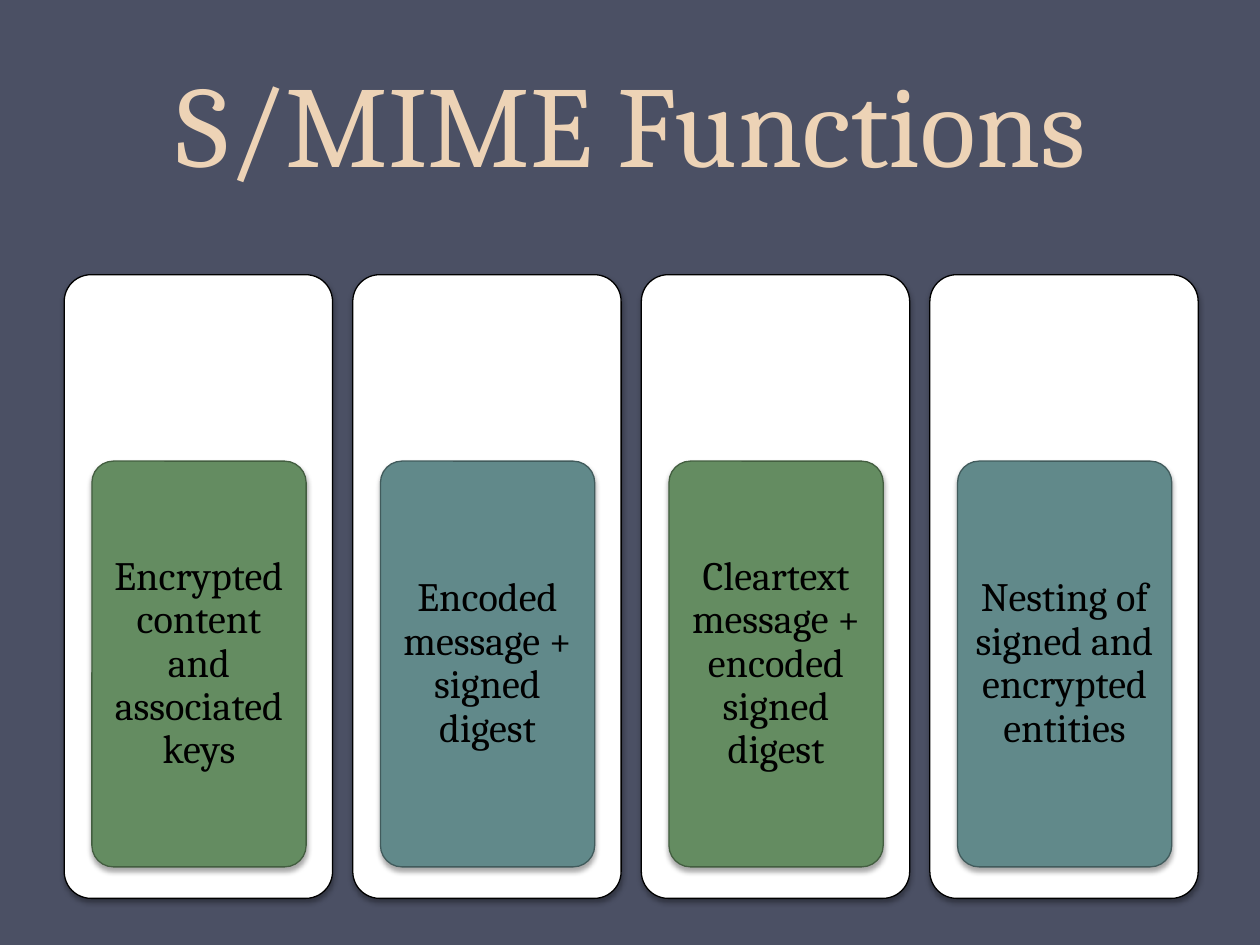
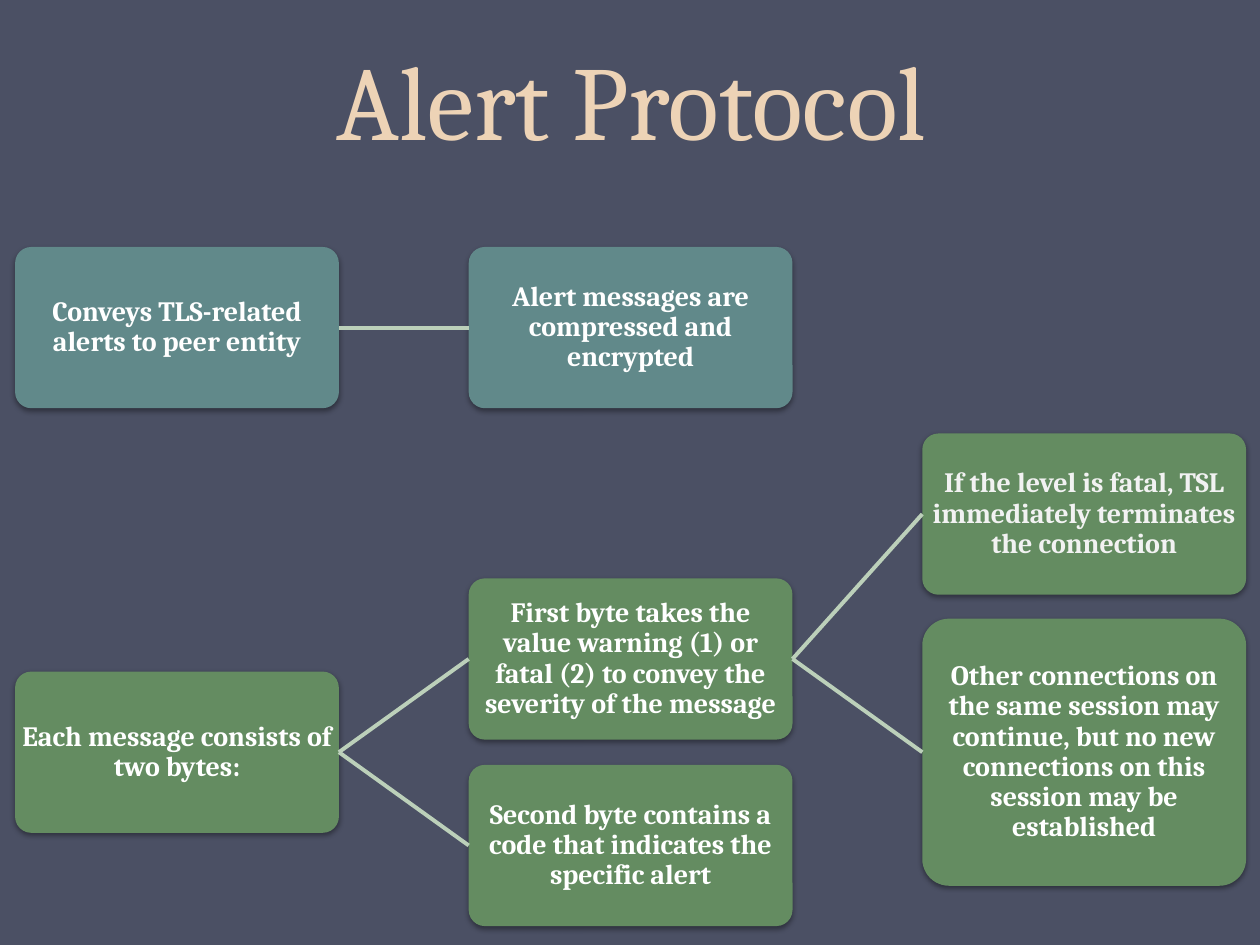
from lxml import etree
from pptx import Presentation
from pptx.dml.color import RGBColor
from pptx.enum.shapes import MSO_CONNECTOR, MSO_SHAPE
from pptx.enum.text import MSO_ANCHOR, PP_ALIGN
from pptx.oxml.ns import qn
from pptx.util import Inches, Pt

NAVY = RGBColor(0x4B, 0x50, 0x64)
SAND = RGBColor(0xED, 0xD3, 0xB6)
GREEN = RGBColor(0x64, 0x8C, 0x61)
MOSS = RGBColor(0x43, 0x5E, 0x40)
TEAL = RGBColor(0x61, 0x89, 0x8A)
PINE = RGBColor(0x41, 0x5B, 0x5C)
SAGE = RGBColor(0xBC, 0xD0, 0xBA)
WHITE = RGBColor(0xFF, 0xFF, 0xFF)
PALE = RGBColor(0xF2, 0xF2, 0xF2)
BLACK = RGBColor(0, 0, 0)
FONT = "Cambria"
ROUND = MSO_SHAPE.ROUNDED_RECTANGLE
LINE = MSO_CONNECTOR.STRAIGHT
CENTER = PP_ALIGN.CENTER
MIDDLE, BOTTOM = MSO_ANCHOR.MIDDLE, MSO_ANCHOR.BOTTOM
RIGHT, LEFT = 3, 1


def write(shape, text, size, color, bold=False, anchor=MIDDLE, pitch=0.9, pads=(0.1, 0.05)):
    frame = shape.text_frame
    frame.word_wrap = True
    frame.vertical_anchor = anchor
    frame.margin_left = frame.margin_right = Inches(pads[0])
    frame.margin_top = frame.margin_bottom = Inches(pads[1])
    para = frame.paragraphs[0]
    para.alignment = CENTER
    para.line_spacing = pitch
    run = para.add_run()
    run.text = text
    font = run.font
    font.name, font.size, font.bold = FONT, Pt(size), bold
    font.color.rgb = color


class Deck:
    """Holds the shared style and the current slide."""

    def __init__(self):
        self.file = Presentation()
        self.file.slide_width = Inches(10)
        self.file.slide_height = Inches(7.5)
        self.slide = None

    def start(self, title, top, size):
        self.slide = self.file.slides.add_slide(self.file.slide_layouts[6])
        fill = self.slide.background.fill
        fill.solid()
        fill.fore_color.rgb = NAVY
        box = self.slide.shapes.add_textbox(Inches(0.51), Inches(top), Inches(9), Inches(1.75))
        write(box, title, size, SAND, anchor=BOTTOM, pitch=Pt(58))

    def box(self, left, top, width, height, color, edge=None, dark=35, drop=1.8):
        shape = self.slide.shapes.add_shape(
            ROUND, Inches(left), Inches(top), Inches(width), Inches(height))
        shape.adjustments[0] = 0.1
        shape.fill.solid()
        shape.fill.fore_color.rgb = color
        if edge is None:
            shape.line.fill.background()
        else:
            shape.line.color.rgb = edge
            shape.line.width = Pt(0.75)
        self.shade(shape, dark, drop)
        return shape

    def shade(self, shape, dark, drop):
        shape.shadow.inherit = False
        group = shape._element.spPr.find(qn("a:effectLst"))
        cast = etree.SubElement(
            group, qn("a:outerShdw"), blurRad=str(Pt(3.1)), dist=str(Pt(drop)),
            dir="5400000", rotWithShape="0")
        tint = etree.SubElement(cast, qn("a:srgbClr"), val=str(BLACK))
        etree.SubElement(tint, qn("a:alpha"), val=str(dark * 1000))

    def join(self, first, last):
        link = self.slide.shapes.add_connector(LINE, 0, 0, 0, 0)
        link.begin_connect(first, RIGHT)
        link.end_connect(last, LEFT)
        link.line.color.rgb = SAGE
        link.line.width = Pt(2.25)
        etree.SubElement(link._element.spPr, qn("a:effectLst"))

    def card(self, left, text, color, edge):
        self.box(left, 2.18, 2.13, 4.95, WHITE, BLACK)
        inner = self.box(left + 0.22, 3.66, 1.7, 3.22, color, edge)
        write(inner, text, 23, BLACK, pads=(0.06, 0.05))

    def node(self, col, top, text, color=GREEN, height=1.28, ink=WHITE, source=None):
        shape = self.box(0.12 + 3.6 * col, top, 2.57, height, color, dark=38, drop=1.6)
        write(shape, text, 16, ink, bold=True, pads=(0.01, 0.01))
        if source is not None:
            self.join(source, shape)
        return shape


def functions(deck):
    deck.start("S/MIME Functions", -0.19, 66)
    tones = ((GREEN, MOSS), (TEAL, PINE))
    cards = (
        "Encrypted content and associated keys",
        "Encoded message + signed digest",
        "Cleartext message + encoded signed digest",
        "Nesting of signed and encrypted entities",
    )
    for i, text in enumerate(cards):
        deck.card(0.51 + 2.29 * i, text, *tones[i % 2])


def alerts(deck):
    deck.start("Alert Protocol", -0.42, 60)
    alert = deck.node(0, 1.96, "Conveys TLS-related alerts to peer entity", TEAL)
    deck.node(1, 1.96, "Alert messages are compressed and encrypted", TEAL, source=alert)
    bytes_ = deck.node(0, 5.33, "Each message consists of two bytes:")
    level = deck.node(
        1, 4.59, "First byte takes the value warning (1) or fatal (2) "
        "to convey the severity of the message", source=bytes_)
    deck.node(
        2, 3.44, "If the level is fatal, TSL immediately terminates the connection",
        ink=PALE, source=level)
    deck.node(
        2, 4.91, "Other connections on the same session may continue, but no new "
        "connections on this session may be established", height=2.12, source=level)
    deck.node(
        1, 6.07, "Second byte contains a code that indicates the specific alert",
        source=bytes_)


def main():
    deck = Deck()
    functions(deck)
    alerts(deck)
    deck.file.save("out.pptx")


if __name__ == "__main__":
    main()
